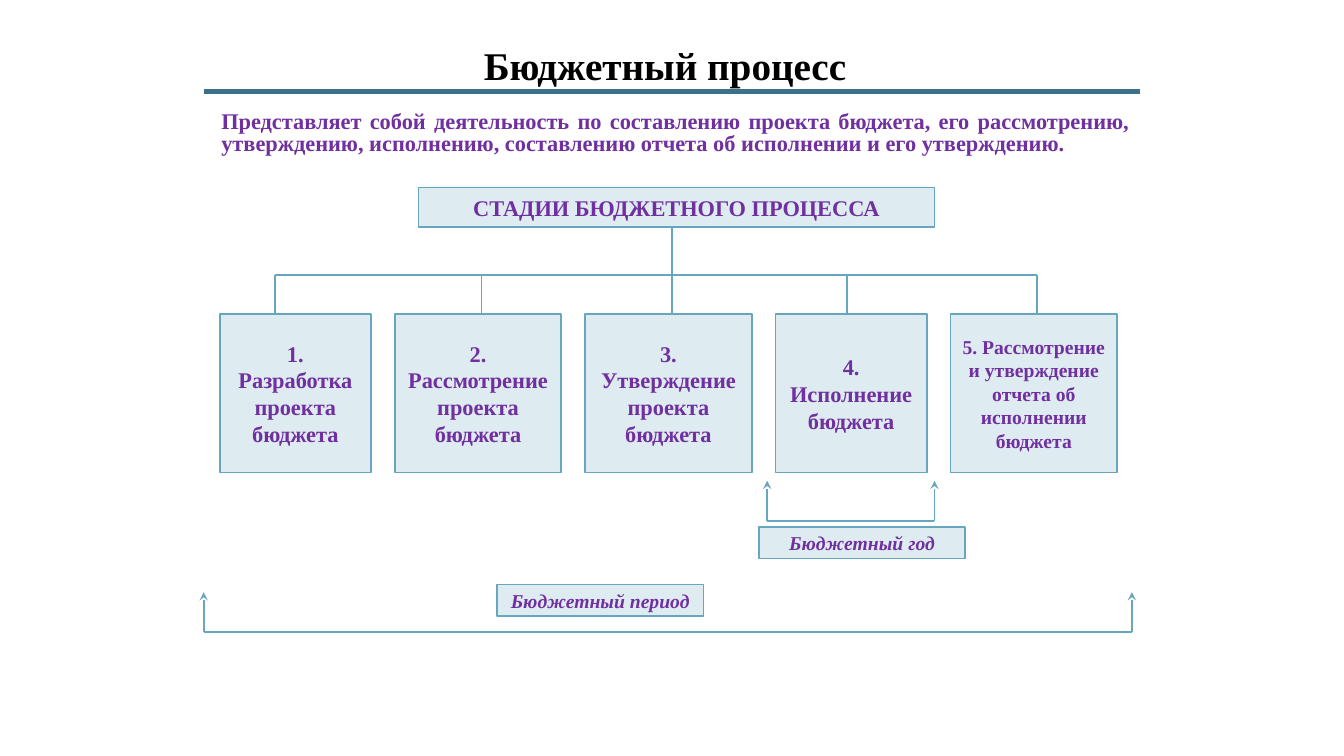
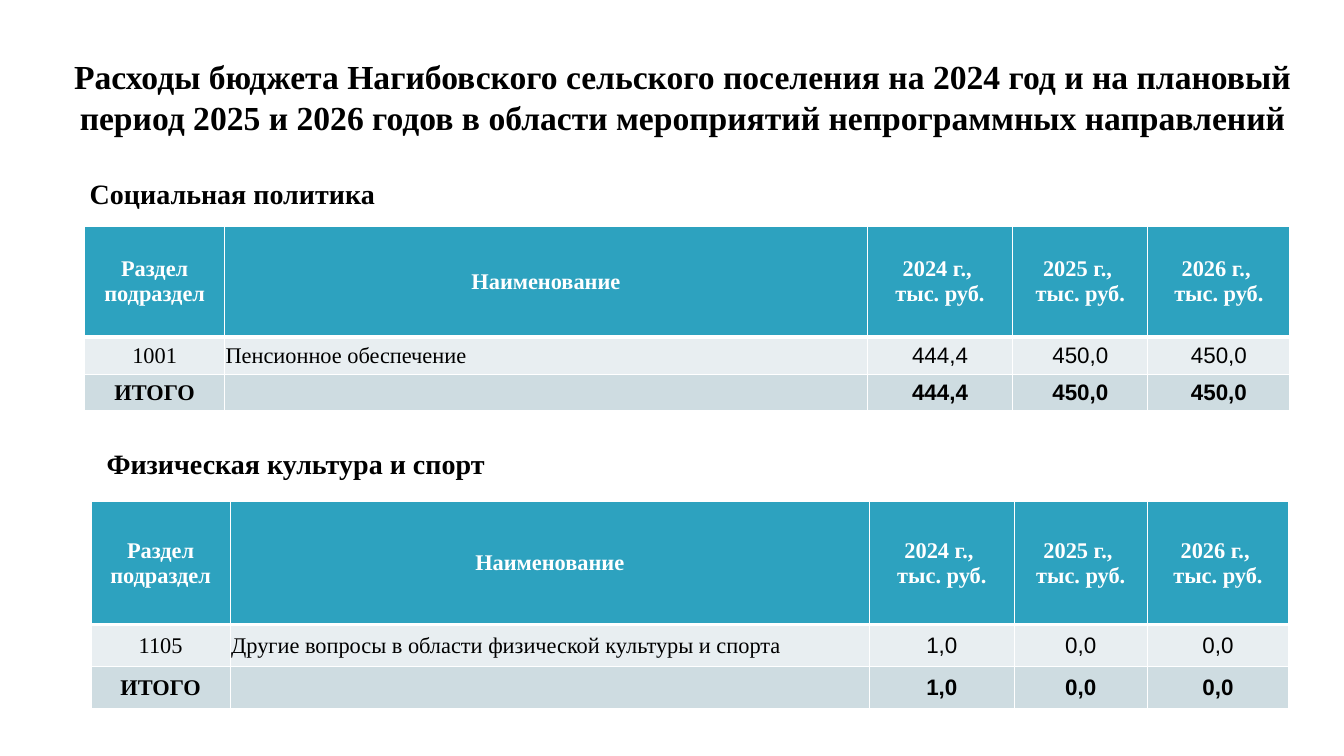
"""Build two slides on the budget process and budget spending."""
from lxml.etree import SubElement
from pptx import Presentation
from pptx.dml.color import RGBColor
from pptx.enum.shapes import MSO_CONNECTOR, MSO_SHAPE
from pptx.enum.text import MSO_ANCHOR, MSO_AUTO_SIZE, PP_ALIGN
from pptx.oxml.ns import qn
from pptx.util import Pt

rgb = RGBColor.from_string
BLACK, WHITE, PURPLE = "000000", "FFFFFF", "7030A0"
PALE, EDGE, RULE = "DEEBF1", "68A5BF", "3B728A"
HEAD, ROW, TOTAL = "2DA2BF", "E8EEF1", "CEDCE1"
SERIF, SANS = "Times New Roman", "Arial"
LEFT, MID, JUST = PP_ALIGN.LEFT, PP_ALIGN.CENTER, PP_ALIGN.JUSTIFY


def write(frame, text, size, color, align=MID, **extra):
    style = {"name": SERIF, "size": Pt(size), "bold": True, **extra}
    for num, line in enumerate(text.split("\n")):
        para = frame.add_paragraph() if num else frame.paragraphs[0]
        para.alignment = align
        run = para.add_run()
        run.text = line
        run.font.color.rgb = rgb(color)
        for key, value in style.items():
            setattr(run.font, key, value)


def draw(slide, x1, y1, x2, y2, color=EDGE, width=1.25, arrow=False):
    line = slide.shapes.add_connector(
        MSO_CONNECTOR.STRAIGHT, Pt(x1), Pt(y1), Pt(x2), Pt(y2))
    line.line.color.rgb = rgb(color)
    line.line.width = Pt(width)
    if arrow:
        SubElement(line.line._get_or_add_ln(), qn("a:tailEnd"), type="stealth")
    SubElement(line._element.spPr, qn("a:effectLst"))


deck = Presentation()
deck.slide_width, deck.slide_height = Pt(960), Pt(540)

titles = [
    ("Бюджетный процесс", 28, MSO_ANCHOR.BOTTOM, (151, 28, 648, 39)),
    ("Расходы бюджета Нагибовского сельского поселения на 2024 год и на плановый "
     "период 2025 и 2026 годов в области мероприятий непрограммных направлений",
     24, MSO_ANCHOR.MIDDLE, (31.5, 36, 912, 66)),
]
slides = []
for text, size, anchor, area in titles:
    slide = deck.slides.add_slide(deck.slide_layouts[5])
    title = slide.shapes.title
    title.left, title.top, title.width, title.height = map(Pt, area)
    frame = title.text_frame
    frame.auto_size = MSO_AUTO_SIZE.NONE
    frame.word_wrap = True
    frame.vertical_anchor = anchor
    write(frame, text, size, BLACK)
    slides.append(slide)
stages, costs = slides

frame = stages.shapes.add_textbox(Pt(151), Pt(77), Pt(663), Pt(52)).text_frame
frame.word_wrap = True
write(frame, "Представляет собой деятельность по составлению проекта бюджета, "
      "его рассмотрению, утверждению, исполнению, составлению отчета об "
      "исполнении и его утверждению.", 16, PURPLE, JUST)
frame.paragraphs[0].line_spacing = 0.8

boxes = [
    ("СТАДИИ БЮДЖЕТНОГО ПРОЦЕССА", 16, False, (299, 134, 368.5, 28)),
    ("Бюджетный год", 14, True, (542, 376.5, 147.5, 22.5)),
    ("Бюджетный период", 14, True, (355, 417.5, 147.5, 22.5)),
]
left = 157
for text, size, width in [
    ("1. Разработка проекта бюджета", 16, 108),
    ("2. Рассмотрение проекта бюджета", 16, 119),
    ("3. Утверждение проекта бюджета", 16, 119),
    ("4. Исполнение бюджета", 16, 108),
    ("5. Рассмотрение и утверждение отчета об исполнении бюджета", 14, 119),
]:
    boxes.append((text, size, False, (left, 224.5, width, 113)))
    left += width + 17

for text, size, slant, area in boxes:
    box = stages.shapes.add_shape(MSO_SHAPE.RECTANGLE, *map(Pt, area))
    box.shadow.inherit = False
    box.fill.solid()
    box.fill.fore_color.rgb = rgb(PALE)
    box.line.color.rgb = rgb(EDGE)
    box.line.width = Pt(1.25)
    box.text_frame.word_wrap = True
    box.text_frame.vertical_anchor = MSO_ANCHOR.MIDDLE
    write(box.text_frame, text, size, PURPLE, italic=slant)

drops = [196.5, 344, 480, 605, 741]
draw(stages, drops[2], 162, drops[2], 196.5)
draw(stages, drops[0], 196.5, drops[-1], 196.5)
for x in drops:
    draw(stages, x, 196.5, x, 224.5)
for start, end, base in [(548, 667.5, 372), (145.5, 808.5, 451.5)]:
    draw(stages, start, base, end, base)
    for x in (start, end):
        draw(stages, x, base, x, base - 28.5, arrow=True)
draw(stages, 145.5, 65.5, 814.5, 65.5, RULE, 3.75)

header = ["Раздел подраздел", "Наименование"]
header += [f"{year} г., \nтыс. руб." for year in (2024, 2025, 2026)]
tables = [
    ("Социальная политика", (57, 122.5), (60.5, 161.5),
     [100, 459, 104, 96.5, 101.5], [79, 27, 26],
     "1001", "Пенсионное обеспечение", ["444,4", "450,0", "450,0"]),
    ("Физическая культура и спорт", (69, 315.5), (65, 358),
     [99.5, 456.5, 103.5, 95, 101], [88, 30, 30],
     "1105", "Другие вопросы в области физической культуры и спорта",
     ["1,0", "0,0", "0,0"]),
]
pads = {"margin_left": Pt(0.7), "margin_right": Pt(0.7), "margin_top": Pt(0.7),
        "margin_bottom": 0, "vertical_anchor": MSO_ANCHOR.MIDDLE}
for name, spot, corner, cols, rows, code, item, sums in tables:
    frame = costs.shapes.add_textbox(*map(Pt, spot), Pt(300), Pt(31)).text_frame
    frame.word_wrap = True
    write(frame, name, 20, BLACK, LEFT)
    grid = costs.shapes.add_table(
        len(rows), len(cols), *map(Pt, corner), Pt(sum(cols)), Pt(sum(rows))).table
    for col, width in zip(grid.columns, cols):
        col.width = Pt(width)
    for row, height in zip(grid.rows, rows):
        row.height = Pt(height)
    texts = [header, [code, item, *sums], ["ИТОГО", "", *sums]]
    for r, line in enumerate(texts):
        for c, text in enumerate(line):
            cell = grid.cell(r, c)
            for key, value in pads.items():
                setattr(cell, key, value)
            for side in "LRTB":
                thick = (r, side) in [(0, "B"), (1, "T")]
                edge = SubElement(cell._tc.get_or_add_tcPr(), qn(f"a:ln{side}"),
                                  w=str(Pt(3 if thick else 1)))
                fill = SubElement(edge, qn("a:solidFill"))
                SubElement(fill, qn("a:srgbClr"), val=WHITE)
            cell.fill.solid()
            cell.fill.fore_color.rgb = rgb((HEAD, ROW, TOTAL)[r])
            if text:
                write(cell.text_frame, text, 16, BLACK if r else WHITE,
                      LEFT if r and c == 1 else MID, bold=r != 1,
                      name=SANS if r and c > 1 else SERIF)

deck.save("out.pptx")
